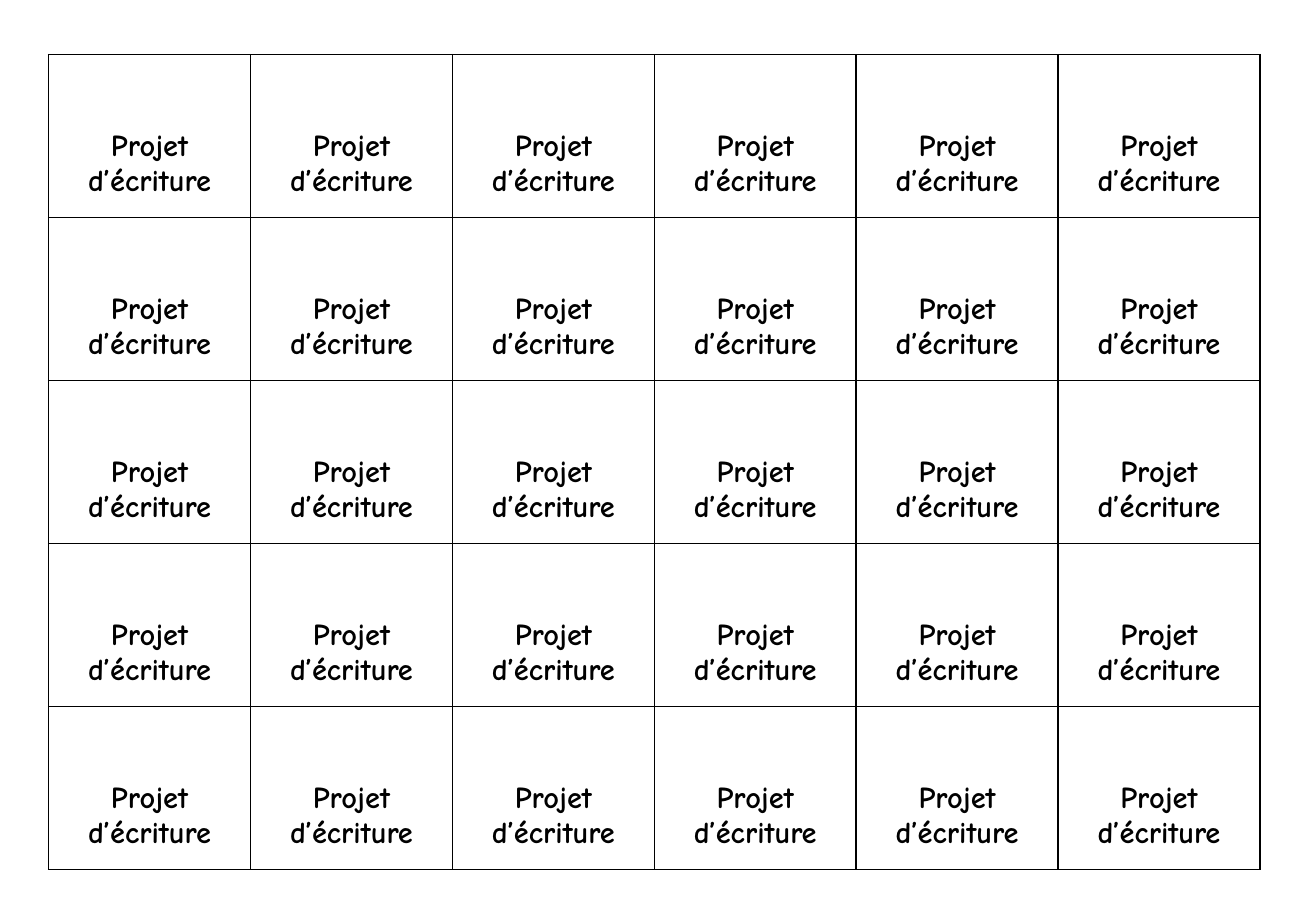
import pptx
import pptx.dml.color
import pptx.enum.text
import pptx.oxml
import pptx.oxml.ns
import pptx.util
from pptx.util import Inches

BLACK = pptx.dml.color.RGBColor(0x00, 0x00, 0x00)
FONT = "Comic Neue"
LABEL = "Projet d’écriture"
ROWS, COLUMNS = 5, 6
MARGIN = Inches(0.15)


def add_borders(cell, color, width):
    """Draw a solid line on all four sides of a cell."""
    properties = cell._tc.get_or_add_tcPr()
    for side in ("lnL", "lnR", "lnT", "lnB"):
        properties.append(pptx.oxml.parse_xml(
            f'<a:{side} {pptx.oxml.ns.nsdecls("a")} w="{int(width)}">'
            f'<a:solidFill><a:srgbClr val="{color}"/></a:solidFill></a:{side}>'))


def format_label_cell(cell):
    add_borders(cell, BLACK, pptx.util.Pt(1))
    cell.fill.background()
    cell.margin_left = cell.margin_right = MARGIN
    cell.margin_top = cell.margin_bottom = MARGIN
    cell.vertical_anchor = pptx.enum.text.MSO_ANCHOR.BOTTOM

    # Label text
    cell.text_frame.text = LABEL
    paragraph = cell.text_frame.paragraphs[0]
    paragraph.alignment = pptx.enum.text.PP_ALIGN.CENTER
    font = paragraph.runs[0].font
    font.name = FONT
    font.size = pptx.util.Pt(18)
    font.bold = True
    font.color.rgb = BLACK


def add_label_grid(slide, left, top, width, height):
    """Fill the box with equal label cells."""
    table = slide.shapes.add_table(ROWS, COLUMNS, left, top, width, height).table
    table.first_row = False
    table.horz_banding = False
    for column in table.columns:
        column.width = int(width / COLUMNS)
    for row in table.rows:
        row.height = int(height / ROWS)
    for cell in table.iter_cells():
        format_label_cell(cell)


def main():
    presentation = pptx.Presentation()
    presentation.slide_width = Inches(10.83)
    presentation.slide_height = Inches(7.5)
    slide = presentation.slides.add_slide(presentation.slide_layouts[6])

    # Sheet of labels
    add_label_grid(slide, Inches(0.4), Inches(0.45), Inches(9.97), Inches(6.71))
    presentation.save("out.pptx")


if __name__ == "__main__":
    main()
